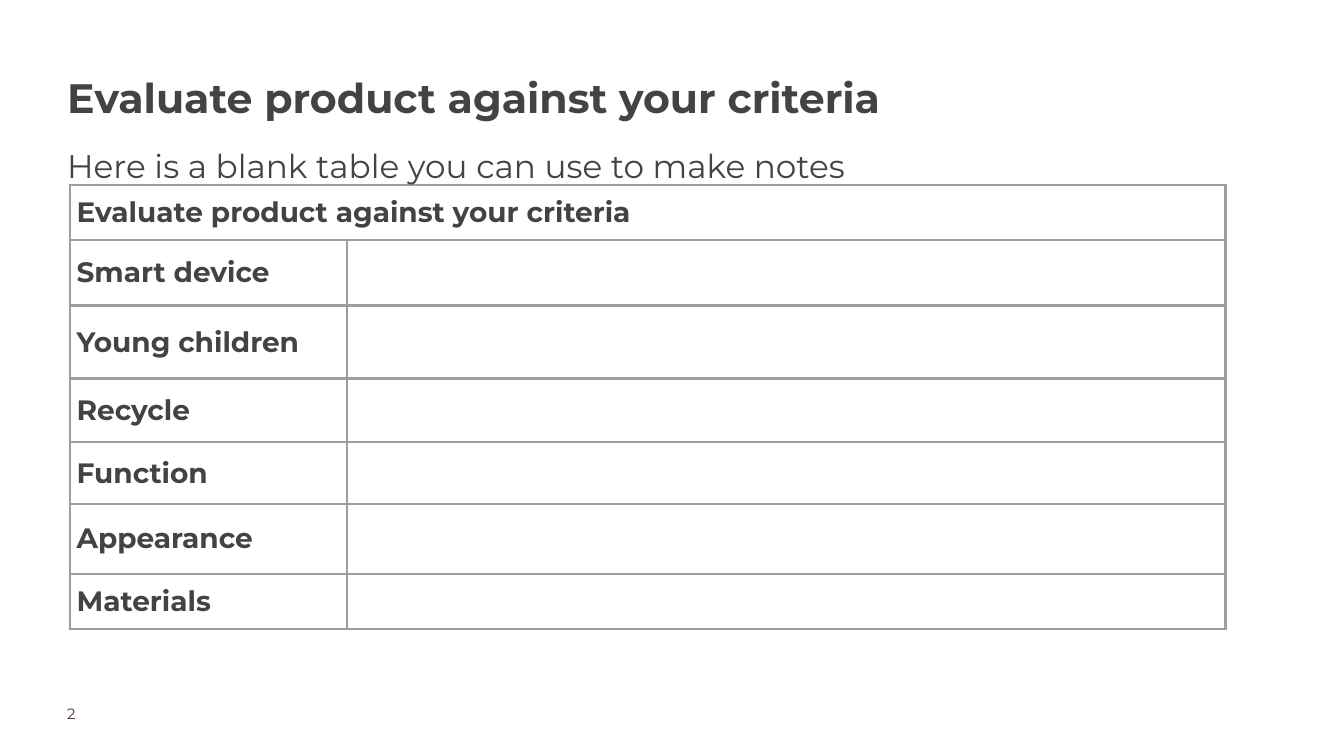
from dataclasses import dataclass

import pptx
import pptx.util
import pptx.dml.color
import pptx.enum.text
import pptx.oxml
import pptx.oxml.ns
from pptx.util import Inches

COLORS = {"text": "434343", "number": "4B3241", "border": "9E9E9E"}
FONT = "Montserrat"
HEADING = "Evaluate product against your criteria"
COLUMN_WIDTHS = (4.12, 13.08)
BORDER_POINTS = 3
CELL_MARGIN = 0.1


@dataclass
class Label:
    text: str
    left: float
    top: float
    width: float
    height: float
    size: float
    color: str = "text"
    bold: bool = False
    line_spacing: float = 1.0
    space_after: float = 0


@dataclass
class Row:
    text: str
    height: float


TITLE = Label(HEADING, 1, 0.97, 14.44, 1.78, 44, bold=True, line_spacing=1.15)
SUBTITLE = Label("Here is a blank table you can use to make notes",
                 1, 1.99, 15.96, 1.15, 35, line_spacing=1.3, space_after=20)
NUMBER = Label("2", 1, 10.48, 1.57, 0.39, 16, color="number")

ROWS = [
    Row(HEADING, 0.82),
    Row("Smart device", 0.98),
    Row("Young children", 1.08),
    Row("Recycle", 0.95),
    Row("Function", 0.92),
    Row("Appearance", 1.04),
    Row("Materials", 0.82),
]


def set_all(target, values: dict) -> None:
    for name, value in values.items():
        setattr(target, name, value)


def add_run(p, text: str, size: float, color: str, bold: bool) -> None:
    r = p.add_run()
    r.text = text
    set_all(r.font, {"name": FONT, "size": pptx.util.Pt(size), "bold": bold})
    r.font.color.rgb = pptx.dml.color.RGBColor.from_string(COLORS[color])


def add_label(s, label: Label) -> None:
    sp = s.shapes.add_textbox(Inches(label.left), Inches(label.top),
                              Inches(label.width), Inches(label.height))
    tf = sp.text_frame
    set_all(tf, {"word_wrap": True, "margin_left": 0, "margin_right": 0,
                 "margin_top": 0, "margin_bottom": 0})
    p = tf.paragraphs[0]
    set_all(p, {"line_spacing": label.line_spacing,
                "space_after": pptx.util.Pt(label.space_after)})
    add_run(p, label.text, label.size, label.color, label.bold)


def add_borders(cell) -> None:
    tcPr = cell._tc.get_or_add_tcPr()
    for index, side in enumerate(("lnL", "lnR", "lnT", "lnB")):
        tcPr.insert(index, pptx.oxml.parse_xml(
            f'<a:{side} {pptx.oxml.ns.nsdecls("a")} w="{pptx.util.Pt(BORDER_POINTS)}">'
            f'<a:solidFill><a:srgbClr val="{COLORS["border"]}"/></a:solidFill>'
            f'</a:{side}>'))


def add_criteria_table(s, left: float, top: float, rows: list[Row]) -> None:
    table = s.shapes.add_table(
        len(rows), len(COLUMN_WIDTHS), Inches(left), Inches(top),
        Inches(sum(COLUMN_WIDTHS)), Inches(sum(row.height for row in rows))).table
    set_all(table, {"first_row": False, "horz_banding": False})
    for column, width in zip(table.columns, COLUMN_WIDTHS):
        column.width = Inches(width)
    margin = Inches(CELL_MARGIN)
    for index, row in enumerate(rows):
        table.rows[index].height = Inches(row.height)
        for cell in table.rows[index].cells:
            cell.fill.background()
            set_all(cell, {"margin_left": margin, "margin_right": margin,
                           "margin_top": margin, "margin_bottom": margin,
                           "vertical_anchor": pptx.enum.text.MSO_ANCHOR.MIDDLE})
            add_borders(cell)
        add_run(table.cell(index, 0).text_frame.paragraphs[0],
                row.text, 30, "text", True)
    table.cell(0, 0).merge(table.cell(0, len(COLUMN_WIDTHS) - 1))


def main() -> None:
    prs = pptx.Presentation()
    set_all(prs, {"slide_width": Inches(20), "slide_height": Inches(11.25)})
    s = prs.slides.add_slide(prs.slide_layouts[6])
    add_label(s, NUMBER)
    add_label(s, TITLE)
    add_criteria_table(s, 1.04, 2.75, ROWS)
    add_label(s, SUBTITLE)
    prs.save("out.pptx")


if __name__ == "__main__":
    main()
